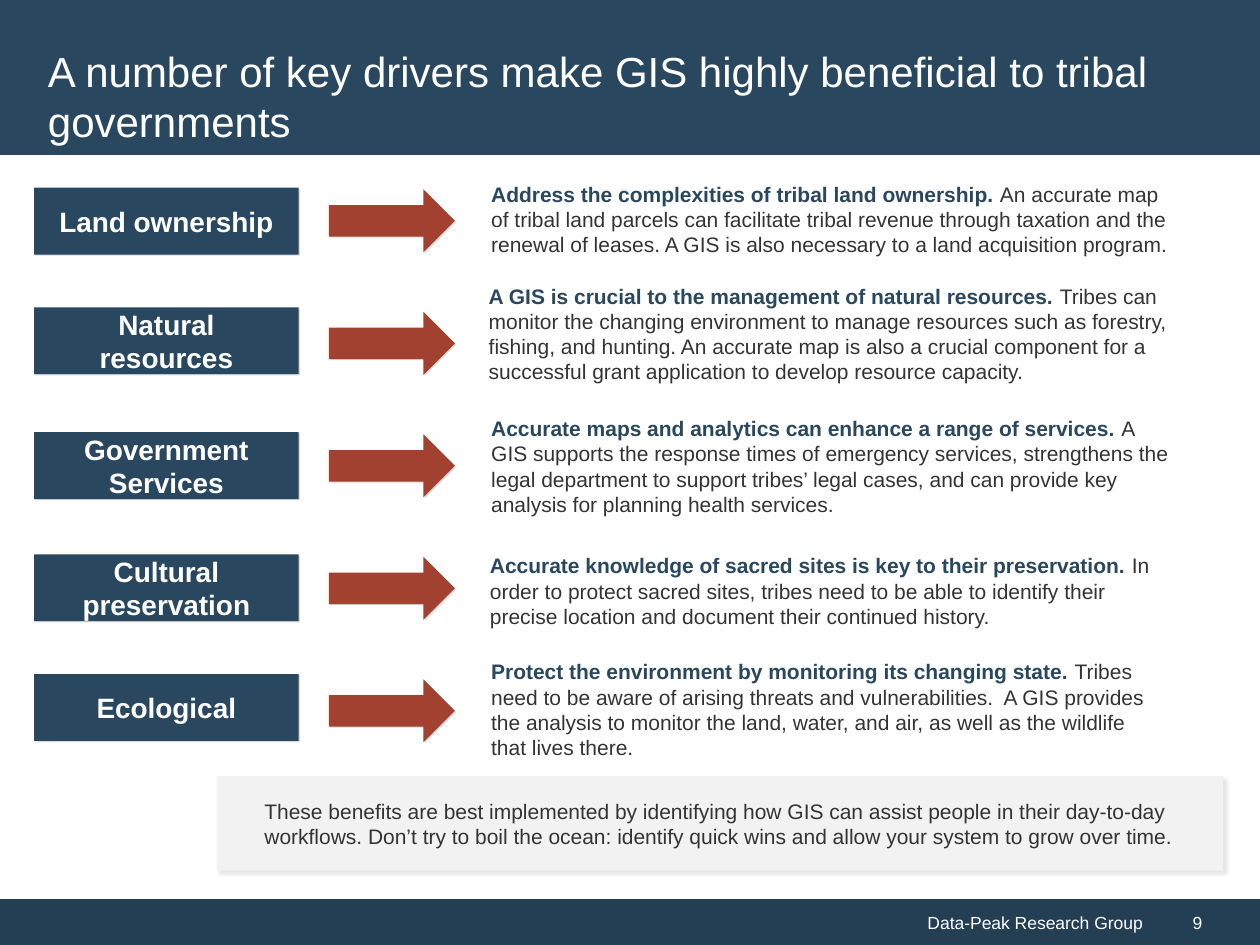
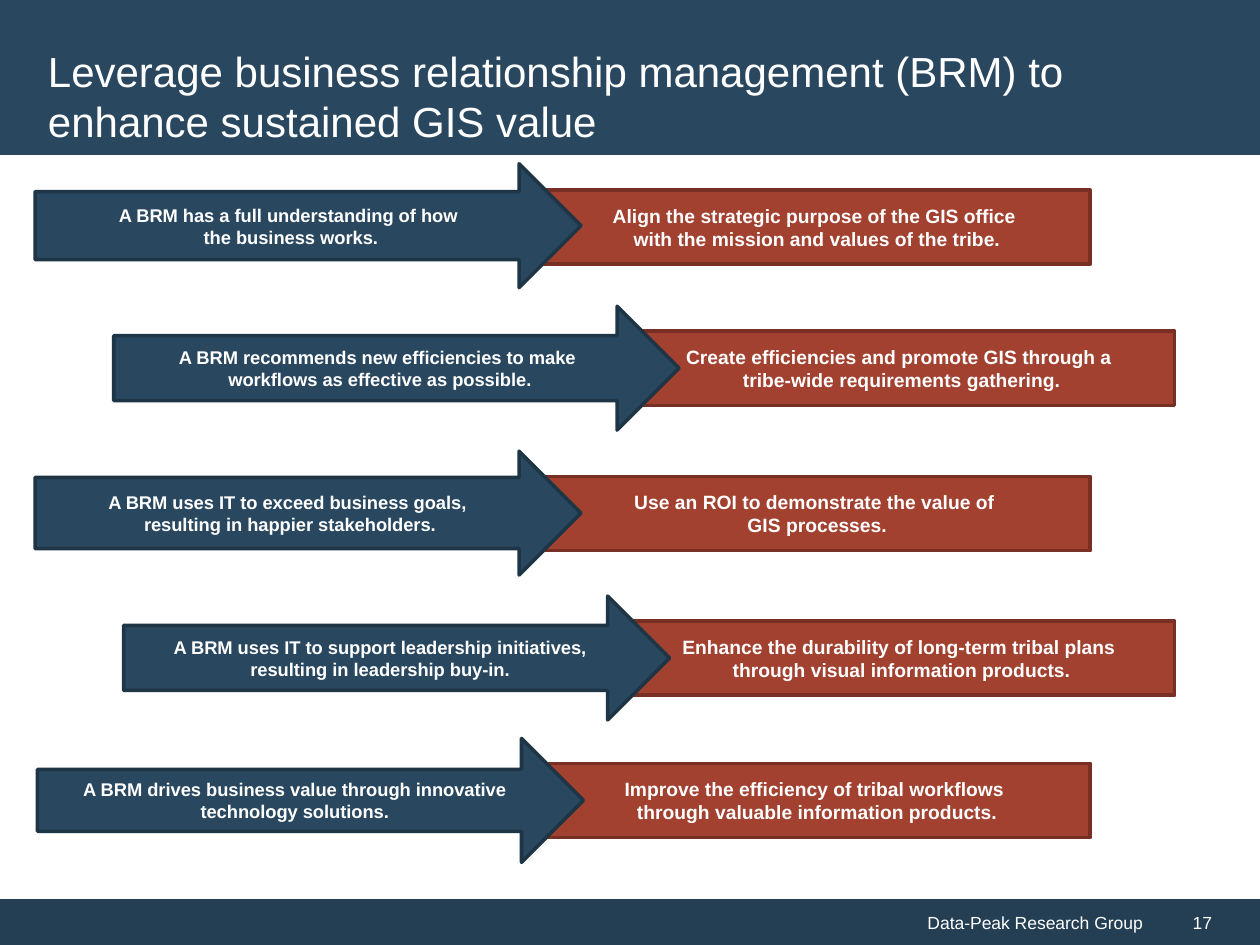
"""Build two slides on the drivers and the sustained value of tribal GIS."""
from dataclasses import dataclass
from typing import Any, Iterable, NamedTuple

from lxml import etree
from pptx import Presentation
from pptx import util as u
from pptx.dml import color
from pptx.enum import shapes, text
from pptx.oxml import ns

FONT = "Arial"
NAVY, NAVY_LINE, FOOTER_NAVY = "29475F", "1E3546", "243F54"
RUST, RUST_LINE = "A24130", "783024"
WHITE, INK, PALE = "FFFFFF", "333333", "F2F2F2"
ORGANISATION = "Data-Peak Research Group"
RECT = shapes.MSO_SHAPE.RECTANGLE
ARROW = shapes.MSO_SHAPE.RIGHT_ARROW
LEFT, CENTER, RIGHT = text.PP_ALIGN.LEFT, text.PP_ALIGN.CENTER, text.PP_ALIGN.RIGHT


class Box(NamedTuple):
    """Place of an element in points."""

    left: float
    top: float
    width: float
    height: float


class Shadow(NamedTuple):
    """Black shadow falling to the lower right."""

    opacity: int
    blur: float
    distance: float


class Run(NamedTuple):
    """Stretch of text in one style."""

    words: str
    size: float
    colour: str = WHITE
    bold: bool = False


@dataclass
class Driver:
    """One driver with its label and explanation."""

    label: str
    label_top: float
    claim: str
    detail: str
    detail_box: Box


@dataclass
class Pairing:
    """What a BRM does and the GIS action that follows from it."""

    strength: str
    arrow: Box
    shaft: float
    action: str
    action_left: float
    action_top: float


FLAT_SHADOW = Shadow(14, 0, 1)
SOFT_SHADOW = Shadow(10, 2, 2)

DRIVERS = [
    Driver("Land ownership", 107.3, "Address the complexities of tribal land ownership. ",
           "An accurate map of tribal land parcels can facilitate tribal revenue through taxation "
           "and the renewal of leases. A GIS is also necessary to a land acquisition program.",
           Box(273.6, 100.1, 402.5, 51)),
    Driver("Natural resources", 175.7, "A GIS is crucial to the management of natural resources. ",
           "Tribes can monitor the changing environment to manage resources such as forestry, "
           "fishing, and hunting. An accurate map is also a crucial component for a successful "
           "grant application to develop resource capacity.",
           Box(272.2, 158.4, 415.4, 62.6)),
    Driver("Government Services", 247, "Accurate maps and analytics can enhance a range of services. ",
           "A GIS supports the response times of emergency services, strengthens the legal "
           "department to support tribes’ legal cases, and can provide key analysis for planning "
           "health services.",
           Box(273.6, 234, 402.5, 65.5)),
    Driver("Cultural preservation", 316.8,
           "Accurate knowledge of sacred sites is key to their preservation. ",
           "In order to protect sacred sites, tribes need to be able to identify their precise "
           "location and document their continued history.",
           Box(272.9, 312.5, 402.5, 47.5)),
    Driver("Ecological", 385.2, "Protect the environment by monitoring its changing state. ",
           "Tribes need to be aware of arising threats and vulnerabilities.  A GIS provides the "
           "analysis to monitor the land, water, and air, as well as the wildlife that lives there.",
           Box(273.6, 373, 400.3, 62.6)),
]

PAIRINGS = [
    Pairing("A BRM has a full understanding of how \vthe business works.",
            Box(20, 93.6, 312, 70.8), 0.55,
            "Align the strategic purpose of the GIS office \nwith the mission and values of the tribe.",
            311, 108.5),
    Pairing("A BRM recommends new efficiencies to make \vworkflows as effective as possible.",
            Box(65, 175, 323, 70.8), 0.525,
            "Create efficiencies and promote GIS through a \ntribe-wide requirements gathering.",
            359.3, 189.2),
    Pairing("A BRM uses IT to exceed business goals, \vresulting in happier stakeholders.",
            Box(20, 257.8, 312, 70.8), 0.575,
            "Use an ROI to demonstrate the value of \nGIS processes.",
            311, 272.2),
    Pairing("A BRM uses IT to support leadership initiatives, resulting in leadership buy-in.",
            Box(70.6, 340.6, 312, 70.8), 0.525,
            "Enhance the durability of long-term tribal plans \nthrough visual information products.",
            359.3, 354.8),
    Pairing("A BRM drives business value through innovative technology solutions.",
            Box(21.4, 422, 312, 70.8), 0.5,
            "Improve the efficiency of tribal workflows \nthrough valuable information products.",
            311, 436.2),
]


def rgb(value: str) -> color.RGBColor:
    """Turn a hex string into a colour."""
    return color.RGBColor.from_string(value)


def apply(target: Any, **formats: Any) -> None:
    """Set each format value on the target."""
    for attribute, value in formats.items():
        setattr(target, attribute, value)


def place(box: Box) -> list[u.Length]:
    """Convert a box to lengths."""
    return [u.Pt(side) for side in box]


def write(frame: Any, runs: Iterable[Run], align: Any = LEFT, anchor: Any = text.MSO_ANCHOR.MIDDLE,
          indent: float = 0, side_inset: float = 7.2) -> None:
    """Fill a text frame, starting a paragraph at each newline."""
    apply(frame, word_wrap=True, auto_size=text.MSO_AUTO_SIZE.NONE, vertical_anchor=anchor,
          margin_left=u.Pt(side_inset), margin_right=u.Pt(side_inset),
          margin_top=u.Pt(3.6), margin_bottom=u.Pt(3.6))
    paragraph = frame.paragraphs[0]
    for run in runs:
        for number, line in enumerate(run.words.split("\n")):
            if number:
                paragraph = frame.add_paragraph()
            paragraph.alignment = align
            if indent:
                paragraph._p.get_or_add_pPr().set("marL", str(u.Pt(indent)))
            written = len(paragraph.runs)
            for part_number, part in enumerate(line.split("\v")):
                if part_number:
                    paragraph.add_line_break()
                paragraph.add_run().text = part
            for piece in paragraph.runs[written:]:
                apply(piece.font, name=FONT, size=u.Pt(run.size), bold=run.bold)
                piece.font.color.rgb = rgb(run.colour)


def cast_shadow(shape: Any, shadow: Shadow) -> None:
    """Add an outer shadow at 45 degrees."""
    effects = shape._element.spPr.find(ns.qn("a:effectLst"))
    outer = etree.SubElement(effects, ns.qn("a:outerShdw"), blurRad=str(u.Pt(shadow.blur)),
                             dist=str(u.Pt(shadow.distance)), dir="2700000", algn="tl",
                             rotWithShape="0")
    black = etree.SubElement(outer, ns.qn("a:srgbClr"), val="000000")
    etree.SubElement(black, ns.qn("a:alpha"), val=str(shadow.opacity * 1000))


def add_block(slide: Any, kind: Any, box: Box, fill: str, line: str | None = None,
              shadow: Shadow | None = None) -> Any:
    """Draw a filled shape with an optional outline and shadow."""
    block = slide.shapes.add_shape(kind, *place(box))
    block.shadow.inherit = False
    block.fill.solid()
    block.fill.fore_color.rgb = rgb(fill)
    if line:
        block.line.color.rgb = rgb(line)
        block.line.width = u.Pt(2)
    else:
        block.line.fill.background()
    if shadow:
        cast_shadow(block, shadow)
    return block


def add_framed_slide(deck: Any, heading: str, page: int) -> Any:
    """Add a slide with its title band and footer."""
    slide = deck.slides.add_slide(deck.slide_layouts.get_by_name("Title Only"))
    footer = add_block(slide, RECT, Box(0, 513.8, 660, 26.2), FOOTER_NAVY)
    write(footer.text_frame, [Run(ORGANISATION, 10)], RIGHT, indent=20.9)
    page_corner = add_block(slide, RECT, Box(660, 513.8, 60, 26.2), FOOTER_NAVY)
    write(page_corner.text_frame, [Run(str(page), 10)], indent=14.4)
    add_block(slide, RECT, Box(0, 0, 720, 88.6), NAVY)
    title = slide.shapes.title
    slide.shapes._spTree.append(title._element)
    left, top, width, height = place(Box(20.2, 20.2, 679, 69))
    apply(title, left=left, top=top, width=width, height=height)
    write(title.text_frame, [Run(heading, 24)])
    return slide


def add_driver(slide: Any, driver: Driver, arrow_top: float) -> None:
    """Draw a driver's label, arrow and explanation."""
    label = add_block(slide, RECT, Box(19.5, driver.label_top, 151.2, 38.2), NAVY,
                      shadow=FLAT_SHADOW)
    write(label.text_frame, [Run(driver.label, 16, bold=True)], CENTER, side_inset=11.5)
    add_block(slide, ARROW, Box(188, arrow_top, 72, 36), RUST, shadow=FLAT_SHADOW)
    detail = slide.shapes.add_textbox(*place(driver.detail_box))
    write(detail.text_frame, [Run(driver.claim, 12, NAVY, True), Run(driver.detail, 12, INK)],
          anchor=text.MSO_ANCHOR.TOP)


def add_pairing(slide: Any, pairing: Pairing) -> None:
    """Draw a GIS action with the BRM arrow pointing into it."""
    action = add_block(slide, RECT, Box(pairing.action_left, pairing.action_top, 312, 42.5),
                       RUST, RUST_LINE)
    write(action.text_frame, [Run(pairing.action, 11, bold=True)], CENTER)
    strength = add_block(slide, ARROW, pairing.arrow, NAVY, NAVY_LINE)
    strength.adjustments[0] = pairing.shaft
    write(strength.text_frame, [Run(pairing.strength, 10.5, bold=True)], CENTER)


def main() -> None:
    """Build and save the deck."""
    deck = Presentation()
    apply(deck, slide_width=u.Pt(720), slide_height=u.Pt(540))

    drivers = add_framed_slide(
        deck, "A number of key drivers make GIS highly beneficial to tribal governments", 9)
    for row, driver in enumerate(DRIVERS):
        add_driver(drivers, driver, 108.2 + 70 * row)
    advice = add_block(drivers, RECT, Box(124, 443.5, 575, 54), PALE, shadow=SOFT_SHADOW)
    write(advice.text_frame, [Run(
        "These benefits are best implemented by identifying how GIS can assist people in their "
        "day-to-day workflows. Don’t try to boil the ocean: identify quick wins and allow your "
        "system to grow over time.", 12, INK)], indent=20)

    relationships = add_framed_slide(
        deck, "Leverage business relationship management (BRM) to enhance sustained GIS value", 17)
    for pairing in PAIRINGS:
        add_pairing(relationships, pairing)

    deck.save("out.pptx")


if __name__ == "__main__":
    main()
